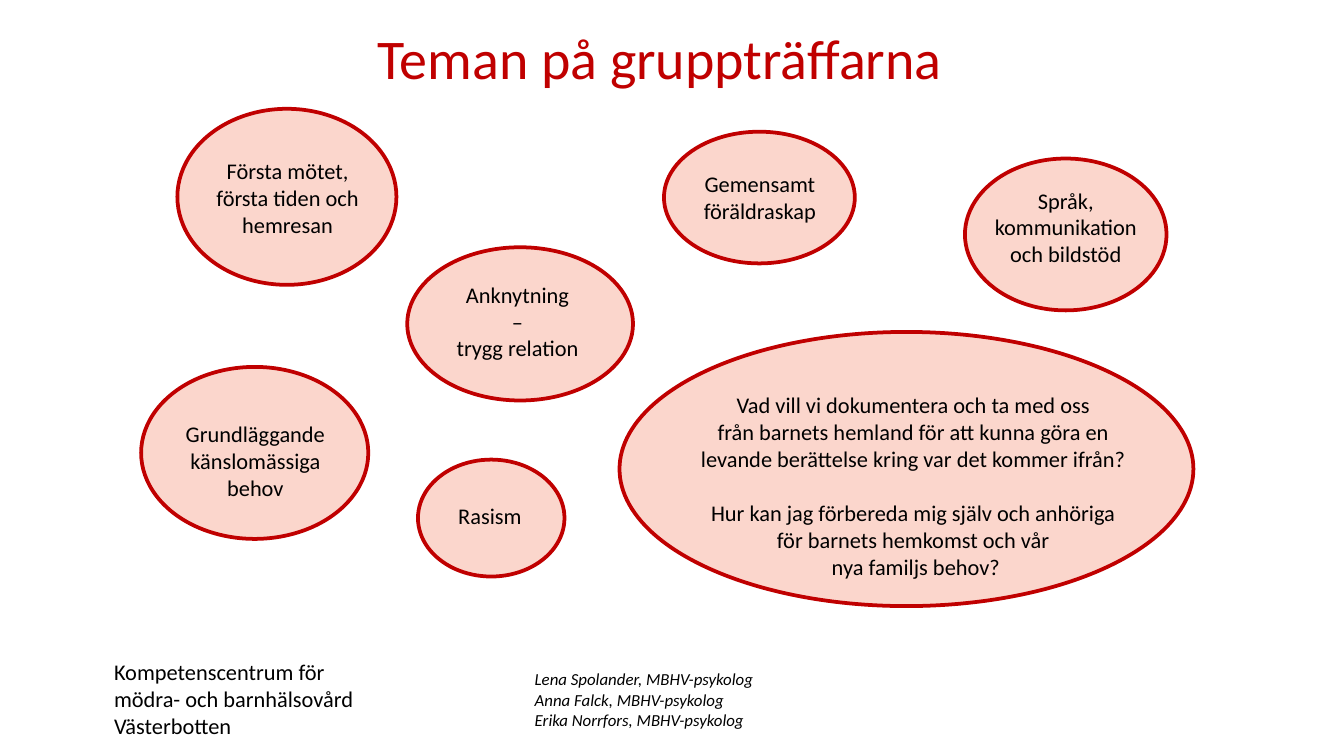
from pptx import Presentation
from pptx.dml.color import RGBColor
from pptx.enum.shapes import MSO_SHAPE
from pptx.enum.text import MSO_ANCHOR, MSO_AUTO_SIZE, PP_ALIGN
from pptx.util import Inches, Pt

CIRCLE = MSO_SHAPE.FLOWCHART_CONNECTOR
LEFT, CENTER = PP_ALIGN.LEFT, PP_ALIGN.CENTER
TOP, MIDDLE = MSO_ANCHOR.TOP, MSO_ANCHOR.MIDDLE
TITLE_ONLY = 5
FONT = "Calibri"
RED, PINK, BLACK = "C00000", "FBD6CC", "000000"
LINE_HEIGHT = 14.65  # one line of 12 pt text, in points

# Each theme: bubble box, text box, blocks of lines
THEMES = [
    ((4.61, 2.47, 4.27, 2.04), (4.28, 2.86, 5.07, 1.82),
     [["Vad vill vi dokumentera och ta med oss ",
       "från barnets hemland för att kunna göra en ",
       "levande berättelse kring var det kommer ifrån? "],
      ["Hur kan jag förbereda mig själv och anhöriga ",
       "för barnets hemkomst och vår ",
       "nya familjs behov?"]]),
    ((1.32, 0.81, 1.63, 1.31), (1.43, 1.12, 1.42, 1.01),
     [["Första mötet, första tiden och hemresan"]]),
    ((7.18, 1.18, 1.5, 1.13), (7.22, 1.34, 1.42, 1.01),
     [["Språk, kommunikation och bildstöd"]]),
    ((4.94, 0.98, 1.42, 0.98), (4.79, 1.22, 1.73, 0.71),
     [["Gemensamt föräldraskap"]]),
    ((3.11, 3.42, 1.09, 0.87), (3.25, 3.69, 0.79, 0.61),
     [["Rasism"]]),
    ((3.03, 1.84, 1.68, 1.14), (3.16, 2.04, 1.42, 0.94),
     [["Anknytning ", "– ", "trygg relation "]]),
    ((1.05, 2.73, 1.69, 1.28), (1.19, 3.08, 1.42, 0.71),
     [["Grundläggande känslomässiga behov"]]),
]


def color(hex_value):
    return RGBColor.from_string(hex_value)


def inches(box):
    return [Inches(length) for length in box]


def write(frame, blocks, size=12, fill=BLACK, italic=False, align=LEFT, anchor=TOP):
    """Write blocks of lines, with a line's height between blocks."""
    frame.word_wrap = True
    frame.auto_size = MSO_AUTO_SIZE.NONE
    frame.vertical_anchor = anchor
    paragraph = None
    for block in blocks:
        for number, line in enumerate(block):
            is_first = paragraph is None
            paragraph = frame.paragraphs[0] if is_first else frame.add_paragraph()
            paragraph.alignment = align
            starts_block = number == 0 and not is_first
            paragraph.space_before = Pt(LINE_HEIGHT if starts_block else 0)
            run = paragraph.add_run()
            run.text = line
            run.font.name = FONT
            run.font.size = Pt(size)
            run.font.italic = italic
            run.font.color.rgb = color(fill)


def add_text(shapes, box, blocks, **text_format):
    write(shapes.add_textbox(*inches(box)).text_frame, blocks, **text_format)


def add_title(slide, box, text):
    title = slide.shapes.title
    title.left, title.top, title.width, title.height = inches(box)
    write(title.text_frame, [[text]], size=30, fill=RED, anchor=MIDDLE)


def add_theme(slide, bubble_box, text_box, blocks):
    theme = slide.shapes.add_group_shape()
    bubble = theme.shapes.add_shape(CIRCLE, *inches(bubble_box))
    bubble.shadow.inherit = False
    bubble.fill.solid()
    bubble.fill.fore_color.rgb = color(PINK)
    bubble.line.color.rgb = color(RED)
    bubble.line.width = Pt(2)
    add_text(theme.shapes, text_box, blocks, align=CENTER)


def main():
    # Widescreen slide, 16:9
    deck = Presentation()
    deck.slide_width = Inches(10)
    deck.slide_height = Inches(10 * 9 / 16)
    slide = deck.slides.add_slide(deck.slide_layouts[TITLE_ONLY])

    # Authors and organisation at the foot
    add_text(slide.shapes, (3.88, 4.93, 2.32, 0.56),
             [["Lena Spolander, MBHV-psykolog",
               "Anna Falck, MBHV-psykolog",
               "Erika Norrfors, MBHV-psykolog"]], size=9, italic=True)
    add_text(slide.shapes, (0.75, 4.85, 2.05, 0.71),
             [["Kompetenscentrum för mödra- och barnhälsovård", "Västerbotten"]])

    # Title and theme bubbles
    add_title(slide, (2.71, 0.1, 4.45, 0.65), "Teman på gruppträffarna")
    for bubble_box, text_box, blocks in THEMES:
        add_theme(slide, bubble_box, text_box, blocks)

    deck.save("out.pptx")


if __name__ == "__main__":
    main()
